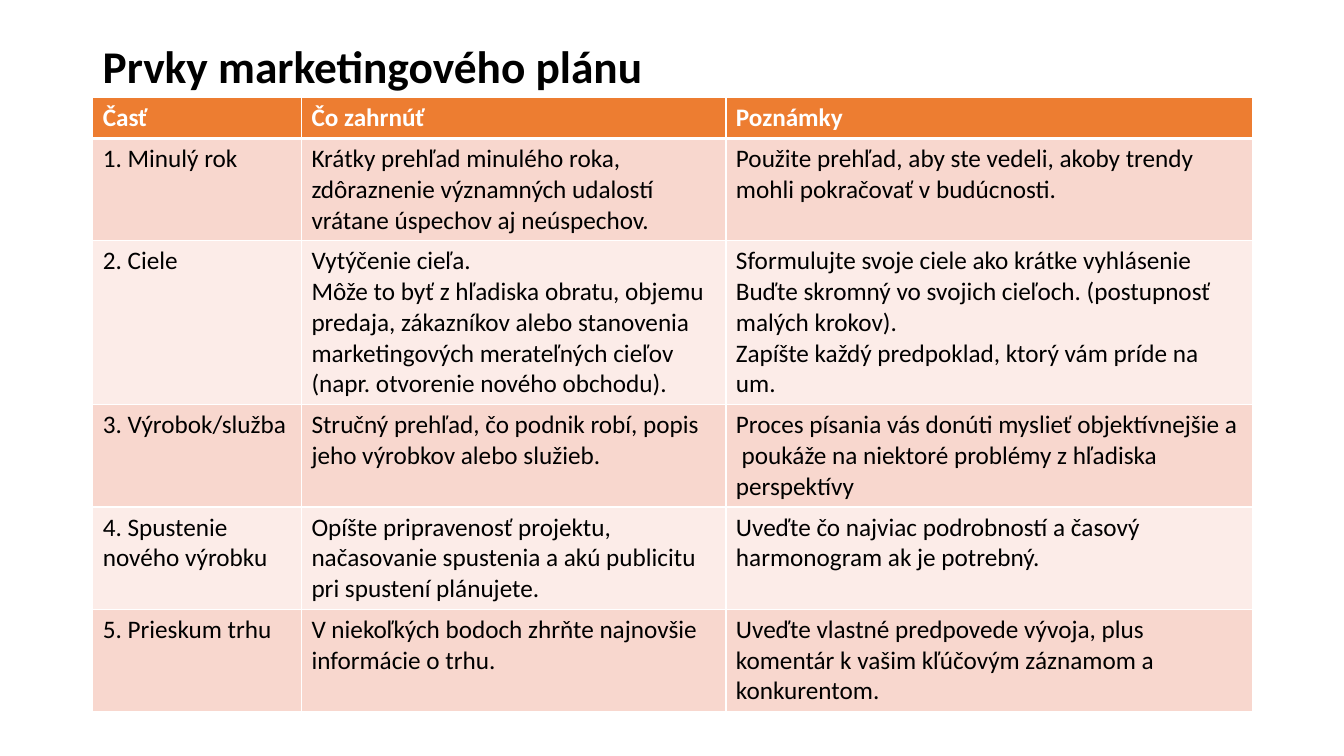
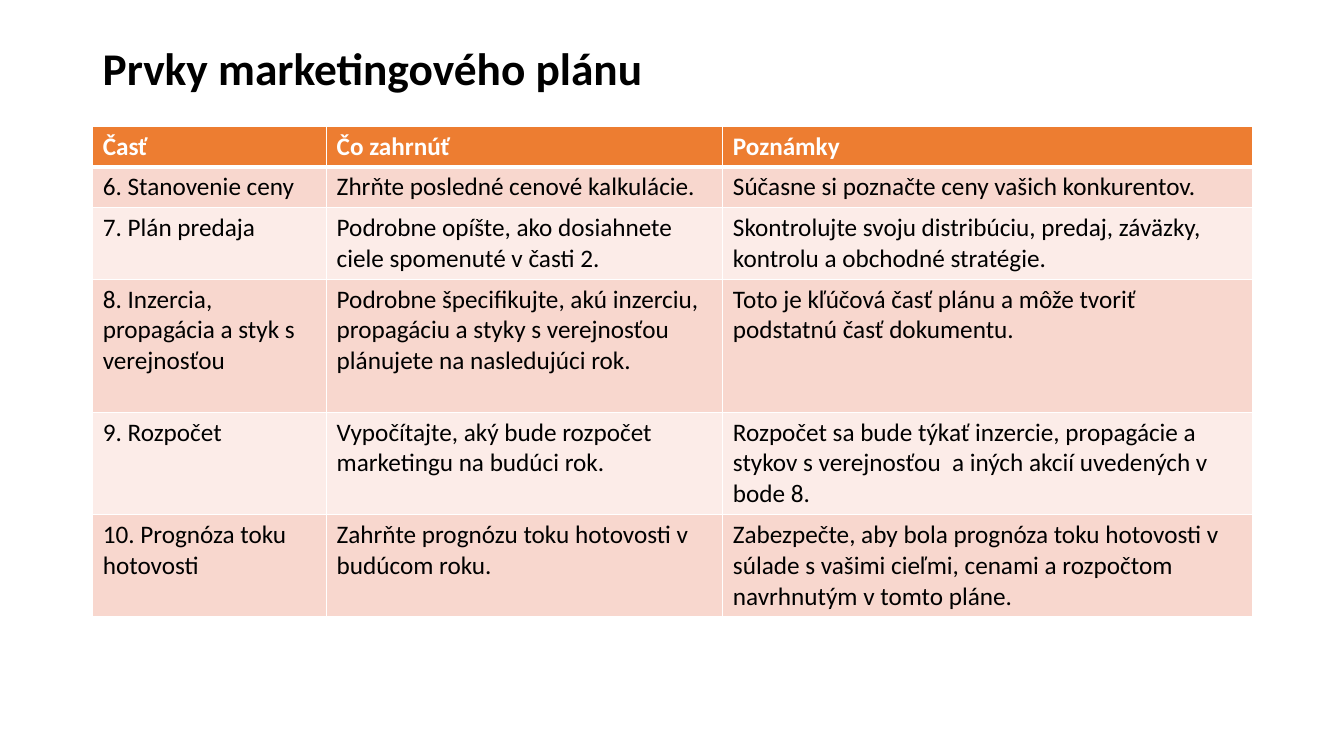
import pptx
import pptx.dml.color
import pptx.enum.text
import pptx.oxml
import pptx.oxml.ns
import pptx.util

TITLE = "Prvky marketingového plánu"
HEADER = ("Časť", "Čo zahrnúť", "Poznámky")

# Each row is (text lines it is tall, cells); a line break in a cell starts a paragraph.
SLIDES = [
    {
        "title_height": 0.57,
        "table_top": 0.97,
        "columns": (2.07, 4.21, 5.22),
        "rows": [
            (3, ("1. Minulý rok",
                 "Krátky prehľad minulého roka, zdôraznenie významných udalostí "
                 "vrátane úspechov aj neúspechov.",
                 "Použite prehľad, aby ste vedeli, akoby trendy mohli pokračovať v budúcnosti.")),
            (5, ("2. Ciele",
                 "Vytýčenie cieľa.\n"
                 "Môže to byť z hľadiska obratu, objemu predaja, zákazníkov alebo stanovenia "
                 "marketingových merateľných cieľov (napr. otvorenie nového obchodu).",
                 "Sformulujte svoje ciele ako krátke vyhlásenie\n"
                 "Buďte skromný vo svojich cieľoch. (postupnosť malých krokov).\n"
                 "Zapíšte každý predpoklad, ktorý vám príde na um.")),
            (3, ("3. Výrobok/služba",
                 "Stručný prehľad, čo podnik robí, popis jeho výrobkov alebo služieb.",
                 "Proces písania vás donúti myslieť objektívnejšie a  poukáže na niektoré "
                 "problémy z hľadiska perspektívy")),
            (3, ("4. Spustenie nového výrobku",
                 "Opíšte pripravenosť projektu, načasovanie spustenia a akú publicitu "
                 "pri spustení plánujete.",
                 "Uveďte čo najviac podrobností a časový harmonogram ak je potrebný.")),
            (3, ("5. Prieskum trhu",
                 "V niekoľkých bodoch zhrňte najnovšie informácie o trhu.",
                 "Uveďte vlastné predpovede vývoja, plus komentár k vašim kľúčovým "
                 "záznamom a konkurentom.")),
        ],
    },
    {
        "title_height": 0.61,
        "table_top": 1.25,
        "columns": (2.32, 3.93, 5.25),
        "rows": [
            (1, ("6. Stanovenie ceny",
                 "Zhrňte posledné cenové kalkulácie.",
                 "Súčasne si poznačte ceny vašich konkurentov.")),
            (2, ("7. Plán predaja",
                 "Podrobne opíšte, ako dosiahnete ciele spomenuté v časti 2.",
                 "Skontrolujte svoju distribúciu, predaj, záväzky, kontrolu a obchodné stratégie.")),
            (4, ("8. Inzercia, propagácia a styk s verejnosťou",
                 "Podrobne špecifikujte, akú inzerciu, propagáciu a styky s verejnosťou "
                 "plánujete na nasledujúci rok.",
                 "Toto je kľúčová časť plánu a môže tvoriť podstatnú časť dokumentu.")),
            (3, ("9. Rozpočet",
                 "Vypočítajte, aký bude rozpočet marketingu na budúci rok.",
                 "Rozpočet sa bude týkať inzercie, propagácie a stykov s verejnosťou  a iných "
                 "akcií uvedených v bode 8.")),
            (3, ("10. Prognóza toku hotovosti",
                 "Zahrňte prognózu toku hotovosti v budúcom roku.",
                 "Zabezpečte, aby bola prognóza toku hotovosti v súlade s vašimi cieľmi, "
                 "cenami a rozpočtom navrhnutým v tomto pláne.")),
        ],
    },
]

THEME = {
    "header_fill": "ED7D31",
    "band_fills": ("F8D7CE", "FCECE8"),
    "border": "FFFFFF",
    "title": {"name": "Calibri", "size": 32.4, "bold": True, "color": "000000"},
    "header": {"name": "Calibri", "size": 18, "bold": True, "color": "FFFFFF"},
    "body": {"name": "Calibri", "size": 18, "bold": False, "color": "000000"},
}

SLIDE_WIDTH, SLIDE_HEIGHT = 13.33, 7.5
LEFT, TITLE_TOP, CONTENT_WIDTH = 0.92, 0.4, 11.5
CELL_PADDING = 0.1
LINE_HEIGHT = 18 * 1.22 / 72
THIN, THICK = 1, 3

inches = pptx.util.Inches
rgb = pptx.dml.color.RGBColor.from_string


def write_text(frame, text, style):
    frame.word_wrap = True
    frame.text = text
    for paragraph in frame.paragraphs:
        for run in paragraph.runs:
            formats = {"name": style["name"], "size": pptx.util.Pt(style["size"]),
                       "bold": style["bold"]}
            for attribute, value in formats.items():
                setattr(run.font, attribute, value)
            run.font.color.rgb = rgb(style["color"])


def set_borders(cell, widths):
    """Draw the cell's edges; widths maps left, right, top, bottom (L, R, T, B) to points."""
    properties = cell._tc.get_or_add_tcPr()
    for position, (edge, width) in enumerate(widths.items()):
        properties.insert(position, pptx.oxml.parse_xml(
            f'<a:ln{edge} {pptx.oxml.ns.nsdecls("a")} w="{pptx.util.Pt(width)}">'
            f'<a:solidFill><a:srgbClr val="{THEME["border"]}"/></a:solidFill></a:ln{edge}>'))


def add_title(slide, height):
    box = slide.shapes.add_textbox(
        inches(LEFT), inches(TITLE_TOP), inches(CONTENT_WIDTH), inches(height))
    write_text(box.text_frame, TITLE, THEME["title"])
    box.text_frame.vertical_anchor = pptx.enum.text.MSO_ANCHOR.MIDDLE
    box.text_frame.paragraphs[0].line_spacing = 0.9


def add_plan_table(slide, top, columns, body_rows):
    rows = [(1, HEADER)] + body_rows
    heights = [CELL_PADDING + lines * LINE_HEIGHT for lines, _ in rows]
    table = slide.shapes.add_table(
        len(rows), len(columns), inches(LEFT), inches(top),
        inches(sum(columns)), inches(sum(heights))).table
    for column, width in zip(table.columns, columns):
        column.width = inches(width)
    for row_index, (_, texts) in enumerate(rows):
        table.rows[row_index].height = inches(heights[row_index])
        is_header = row_index == 0
        fill = THEME["header_fill"] if is_header else THEME["band_fills"][(row_index - 1) % 2]
        borders = {"L": THIN, "R": THIN,
                   "T": THICK if row_index == 1 else THIN,
                   "B": THICK if is_header else THIN}
        for column_index, text in enumerate(texts):
            cell = table.cell(row_index, column_index)
            cell.fill.solid()
            cell.fill.fore_color.rgb = rgb(fill)
            write_text(cell.text_frame, text, THEME["header" if is_header else "body"])
            set_borders(cell, borders)


def main():
    presentation = pptx.Presentation()
    presentation.slide_width = inches(SLIDE_WIDTH)
    presentation.slide_height = inches(SLIDE_HEIGHT)
    blank_layout = presentation.slide_layouts[6]
    for content in SLIDES:
        slide = presentation.slides.add_slide(blank_layout)
        add_title(slide, content["title_height"])
        add_plan_table(slide, content["table_top"], content["columns"], content["rows"])
    presentation.save("out.pptx")


if __name__ == "__main__":
    main()
